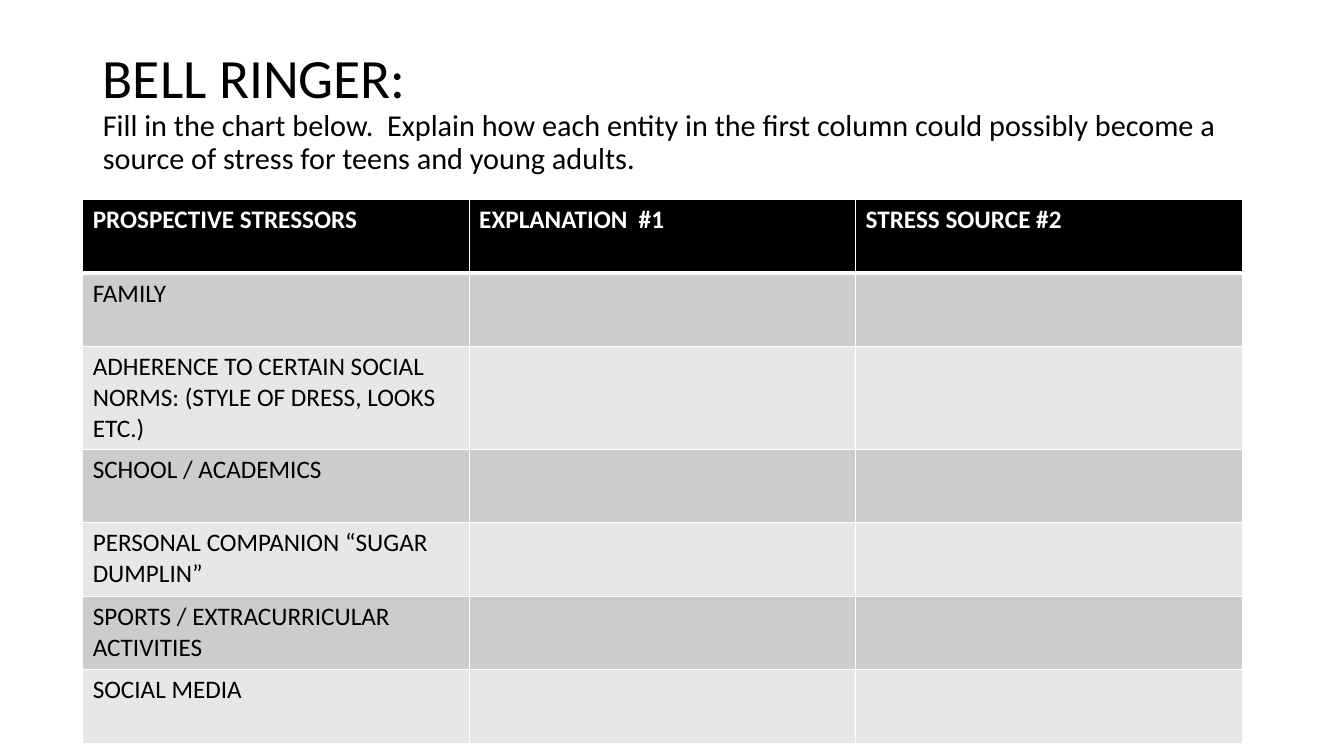
from lxml import etree
from pptx import Presentation
from pptx.dml.color import RGBColor
from pptx.enum.text import MSO_ANCHOR, MSO_AUTO_SIZE, PP_ALIGN
from pptx.oxml.ns import qn
from pptx.util import Inches, Pt

LEFT = PP_ALIGN.LEFT
MIDDLE = MSO_ANCHOR.MIDDLE
NO_FIT = MSO_AUTO_SIZE.NONE
FONT = "Calibri"
TITLE_ONLY = 5
COLORS = {"black": "000000", "white": "FFFFFF", "dark": "CCCCCC", "light": "E7E7E7"}

HEADERS = ["PROSPECTIVE STRESSORS", "EXPLANATION  #1", "STRESS SOURCE #2"]
STRESSORS = [
    "FAMILY",
    "ADHERENCE TO CERTAIN SOCIAL NORMS: (STYLE OF DRESS, LOOKS ETC.)",
    "SCHOOL / ACADEMICS",
    "PERSONAL COMPANION “SUGAR DUMPLIN”",
    "SPORTS / EXTRACURRICULAR ACTIVITIES",
    "SOCIAL MEDIA",
]


def style_font(font, size, color, bold=False):
    font.name = FONT
    font.size = Pt(size)
    font.bold = bold
    font.color.rgb = RGBColor.from_string(COLORS[color])


def add_borders(cell, bottom_width):
    """Draw white cell borders, 1 pt except for the bottom one."""
    tcPr = cell._tc.get_or_add_tcPr()
    widths = {"a:lnL": 1, "a:lnR": 1, "a:lnT": 1, "a:lnB": bottom_width}
    for i, (tag, width) in enumerate(widths.items()):
        ln = etree.Element(qn(tag), w=str(Pt(width)))
        fill = etree.SubElement(ln, qn("a:solidFill"))
        etree.SubElement(fill, qn("a:srgbClr"), val=COLORS["white"])
        tcPr.insert(i, ln)


prs = Presentation()
prs.slide_width = Inches(13.33)
prs.slide_height = Inches(7.5)
s = prs.slides.add_slide(prs.slide_layouts[TITLE_ONLY])

# Title with the instructions on the lines below it
title = s.shapes.title
title.left, title.top = Inches(0.92), Inches(0.4)
title.width, title.height = Inches(11.5), Inches(1.45)
tf = title.text_frame
tf.word_wrap = True
tf.auto_size = NO_FIT
tf.vertical_anchor = MIDDLE
p = tf.paragraphs[0]
p.text = (
    "BELL RINGER: \vFill in the chart below.  Explain how each entity in the first "
    "column could possibly become a source of stress for teens and young adults."
)
p.alignment = LEFT
p.line_spacing = 0.9
for r, size in zip(p.runs, (39.6, 21.6)):
    style_font(r.font, size, "black")

# Stressor table
rows = [HEADERS] + [[stressor, "", ""] for stressor in STRESSORS]
row_height = Inches(0.73)
frame = s.shapes.add_table(
    len(rows), len(HEADERS), Inches(0.82), Inches(1.98), Inches(11.5), row_height * len(rows)
)
table = frame.table
for i, texts in enumerate(rows):
    header = i == 0
    fill = "black" if header else ("dark" if i % 2 else "light")
    table.rows[i].height = row_height
    for j, text in enumerate(texts):
        cell = table.cell(i, j)
        cell.text = text
        cell.fill.solid()
        cell.fill.fore_color.rgb = RGBColor.from_string(COLORS[fill])
        add_borders(cell, 3 if header else 1)
        style_font(cell.text_frame.paragraphs[0].font, 18, "white" if header else "black", header)
        for r in cell.text_frame.paragraphs[0].runs:
            style_font(r.font, 18, "white" if header else "black", header)

prs.save("out.pptx")
